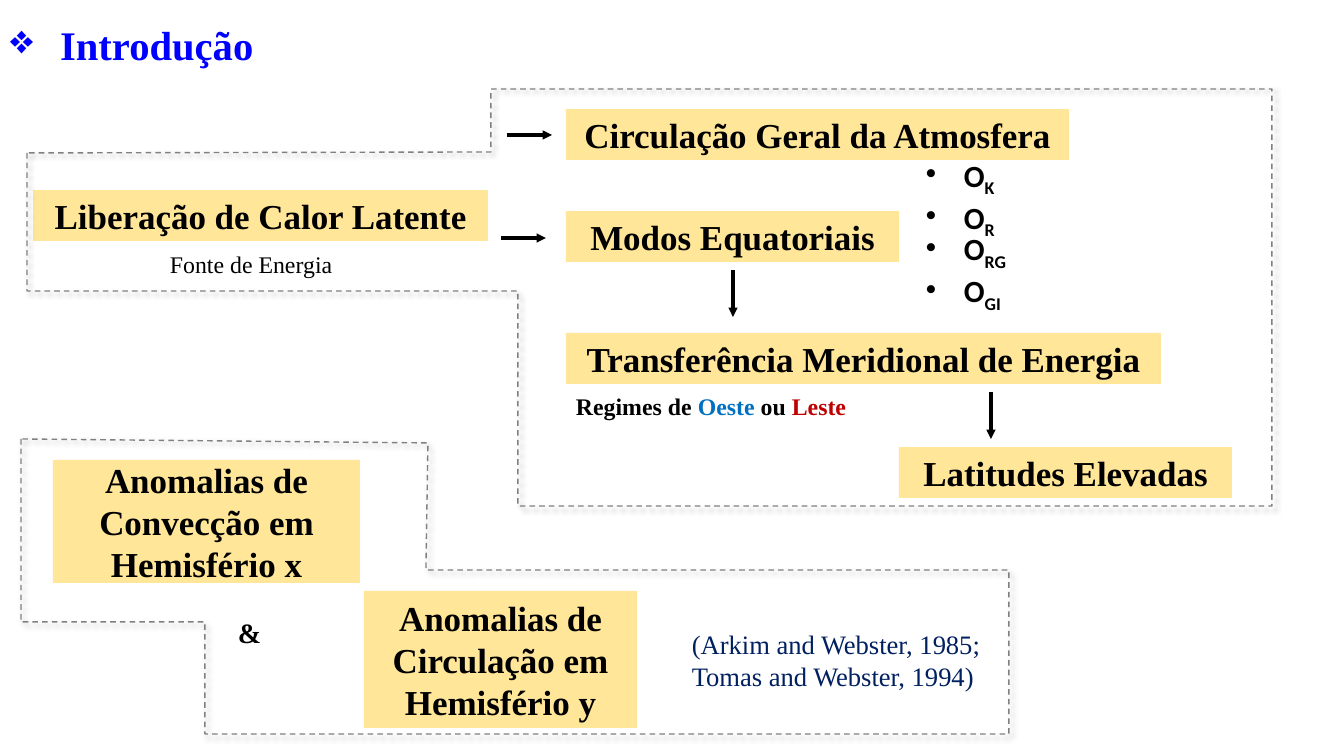
"""Builds the introduction slide on latent heat release and hemispheric anomalies."""
from collections import namedtuple

from lxml import etree
from pptx import Presentation
from pptx.dml.color import RGBColor
from pptx.enum.dml import MSO_LINE
from pptx.enum.shapes import MSO_CONNECTOR, MSO_SHAPE
from pptx.enum.text import MSO_ANCHOR, MSO_AUTO_SIZE, PP_ALIGN
from pptx.oxml.ns import qn
from pptx.util import Pt

PX = 914400 / 100.8
SERIF, SANS = "Times New Roman", "Calibri"
BLACK = RGBColor(0x00, 0x00, 0x00)
BLUE = RGBColor(0x00, 0x00, 0xFF)
NAVY = RGBColor(0x00, 0x20, 0x60)
WEST_BLUE = RGBColor(0x00, 0x70, 0xC0)
EAST_RED = RGBColor(0xC0, 0x00, 0x00)
GRAY = RGBColor(0x80, 0x80, 0x80)
SAND = RGBColor(0xFF, 0xE6, 0x99)
LEFT, CENTER, JUSTIFY = PP_ALIGN.LEFT, PP_ALIGN.CENTER, PP_ALIGN.JUSTIFY
MIDDLE, NO_FIT = MSO_ANCHOR.MIDDLE, MSO_AUTO_SIZE.NONE
RECTANGLE, STRAIGHT, DASH = MSO_SHAPE.RECTANGLE, MSO_CONNECTOR.STRAIGHT, MSO_LINE.DASH

Box = namedtuple("Box", "x y w h")


def px(length):
    """Turn pixels into EMU."""
    return round(length * PX)


def place(region, x, y, w, h):
    """Return the EMU frame of a part given relative to its region."""
    return px(region.x + x), px(region.y + y), px(w), px(h)


def prepare_frame(shape):
    """Give a shape wrapped, vertically centred text and return its frame."""
    frame = shape.text_frame
    frame.word_wrap = True
    frame.auto_size = NO_FIT
    frame.vertical_anchor = MIDDLE
    return frame


def add_run(paragraph, text, size, color=BLACK, bold=True, font=SERIF):
    """Append one formatted run to a paragraph."""
    run = paragraph.add_run()
    run.text = text
    run.font.name, run.font.size, run.font.bold = font, Pt(size), bold
    run.font.color.rgb = color
    return run


def add_bullet(paragraph, symbol, indent):
    """Give a paragraph a hanging bullet."""
    properties = paragraph._p.get_or_add_pPr()
    properties.set("marL", str(px(indent)))
    properties.set("indent", str(-px(indent)))
    etree.SubElement(properties, qn("a:buChar"), char=symbol)


def add_concept(slide, region, frame, text):
    """Add a sand-coloured concept box."""
    concept = slide.shapes.add_shape(RECTANGLE, *place(region, *frame))
    concept.shadow.inherit = False
    concept.fill.solid()
    concept.fill.fore_color.rgb = SAND
    concept.line.fill.background()
    paragraph = prepare_frame(concept).paragraphs[0]
    paragraph.alignment = CENTER
    add_run(paragraph, text, 25)


def add_label(slide, region, frame, size, runs, bold=True):
    """Add a one-paragraph label from pairs of text and colour."""
    label = slide.shapes.add_textbox(*place(region, *frame))
    paragraph = prepare_frame(label).paragraphs[0]
    paragraph.alignment = LEFT
    for text, color in runs:
        add_run(paragraph, text, size, color, bold)


def add_wave_list(slide, region, frame, subscripts):
    """Add a bulleted list of wave symbols with subscripts."""
    waves = prepare_frame(slide.shapes.add_textbox(*place(region, *frame)))
    for index, subscript in enumerate(subscripts):
        paragraph = waves.add_paragraph() if index else waves.paragraphs[0]
        add_bullet(paragraph, "•", 38)
        add_run(paragraph, "O", 22, font=SANS)
        lowered = add_run(paragraph, subscript, 22, font=SANS)
        lowered._r.get_or_add_rPr().set("baseline", "-25000")


def add_arrow(slide, region, x, y, dx, dy):
    """Add a black arrow running from a point by an offset."""
    left, top, width, height = place(region, x, y, dx, dy)
    arrow = slide.shapes.add_connector(STRAIGHT, left, top, left + width, top + height)
    arrow.line.color.rgb = BLACK
    arrow.line.width = Pt(2.25)
    etree.SubElement(arrow.line._get_or_add_ln(), qn("a:tailEnd"), type="triangle")
    etree.SubElement(arrow._element.spPr, qn("a:effectLst"))


def add_outline(slide, region, corners):
    """Add a dashed, shadowed outline around a region."""
    points = [(region.x + x, region.y + y) for x, y in corners]
    builder = slide.shapes.build_freeform(*points[0], scale=PX)
    builder.add_line_segments(points[1:], close=True)
    outline = builder.convert_to_shape()
    outline.fill.background()
    outline.line.color.rgb = GRAY
    outline.line.width = Pt(1)
    outline.line.dash_style = DASH
    outline.shadow.inherit = False
    effects = outline._element.spPr.find(qn("a:effectLst"))
    shadow = etree.SubElement(effects, qn("a:outerShdw"), blurRad=str(Pt(4)),
                              dist=str(Pt(3)), dir="2700000", algn="tl", rotWithShape="0")
    tint = etree.SubElement(shadow, qn("a:srgbClr"), val=str(BLACK))
    etree.SubElement(tint, qn("a:alpha"), val="40000")


def build_title(slide, region):
    """Fill the title placeholder with the section heading."""
    title = slide.shapes.title
    title.left, title.top, title.width, title.height = place(region, 0, 0, region.w, region.h)
    paragraph = prepare_frame(title).paragraphs[0]
    paragraph.alignment = JUSTIFY
    add_bullet(paragraph, "❖", 50)
    add_run(paragraph, "Introdução", 29, BLUE)


def build_energy_flow(slide, region):
    """Draw the path from latent heat release to high latitudes."""
    column, row = 539, 51
    for x, y, width, text in (
        (6, 101, 455, "Liberação de Calor Latente"),
        (column, 20, 503, "Circulação Geral da Atmosfera"),
        (column, 122, 333, "Modos Equatoriais"),
        (column, 244, 595, "Transferência Meridional de Energia"),
        (column + 333, 358, 333, "Latitudes Elevadas"),
    ):
        add_concept(slide, region, (x, y, width, row), text)
    add_label(slide, region, (133, 157, 187, 36), 17, [("Fonte de Energia", BLACK)], bold=False)
    add_label(slide, region, (column, 299, 309, 37), 17, [
        ("Regimes de ", BLACK), ("Oeste ", WEST_BLUE), ("ou ", BLACK), ("Leste", EAST_RED)])
    for arrow in ((480, 46, 45, 0), (474, 149, 45, 0), (706, 181, 0, 47), (964, 303, 0, 47)):
        add_arrow(slide, region, *arrow)
    add_outline(slide, region, [
        (0, 64), (0, 202), (491, 202), (491, region.h),
        (region.w, region.h), (region.w, 0), (464, 0), (464, 63)])
    add_wave_list(slide, region, (889, 76, 122, 67), ("K", "R"))
    add_wave_list(slide, region, (889, 145, 122, 76), ("RG", "GI"))


def build_anomalies(slide, region):
    """Draw the paired anomalies of the two hemispheres with their citation."""
    add_concept(slide, region, (32, 21, 307, 123), "Anomalias de Convecção em Hemisfério x")
    add_concept(slide, region, (343, 152, 273, 137), "Anomalias de Circulação em Hemisfério y")
    add_label(slide, region, (207, 168, 52, 51), 20, [("&", BLACK)])
    add_label(slide, region, (661, 168, 322, 105), 19,
              [("(Arkim and Webster, 1985; Tomas and Webster, 1994)", NAVY)], bold=False)
    add_outline(slide, region, [
        (0, 0), (0, 183), (184, 183), (184, region.h),
        (region.w, region.h), (region.w, 131), (405, 131), (407, 4)])


def main():
    """Build and save the slide."""
    deck = Presentation()
    deck.slide_width, deck.slide_height = px(1344), px(756)
    slide = deck.slides.add_slide(deck.slide_layouts[5])
    build_title(slide, Box(0, 9, 361, 70))
    build_energy_flow(slide, Box(27, 89, 1245, 417))
    build_anomalies(slide, Box(21, 439, 988, 295))
    deck.save("out.pptx")


if __name__ == "__main__":
    main()
